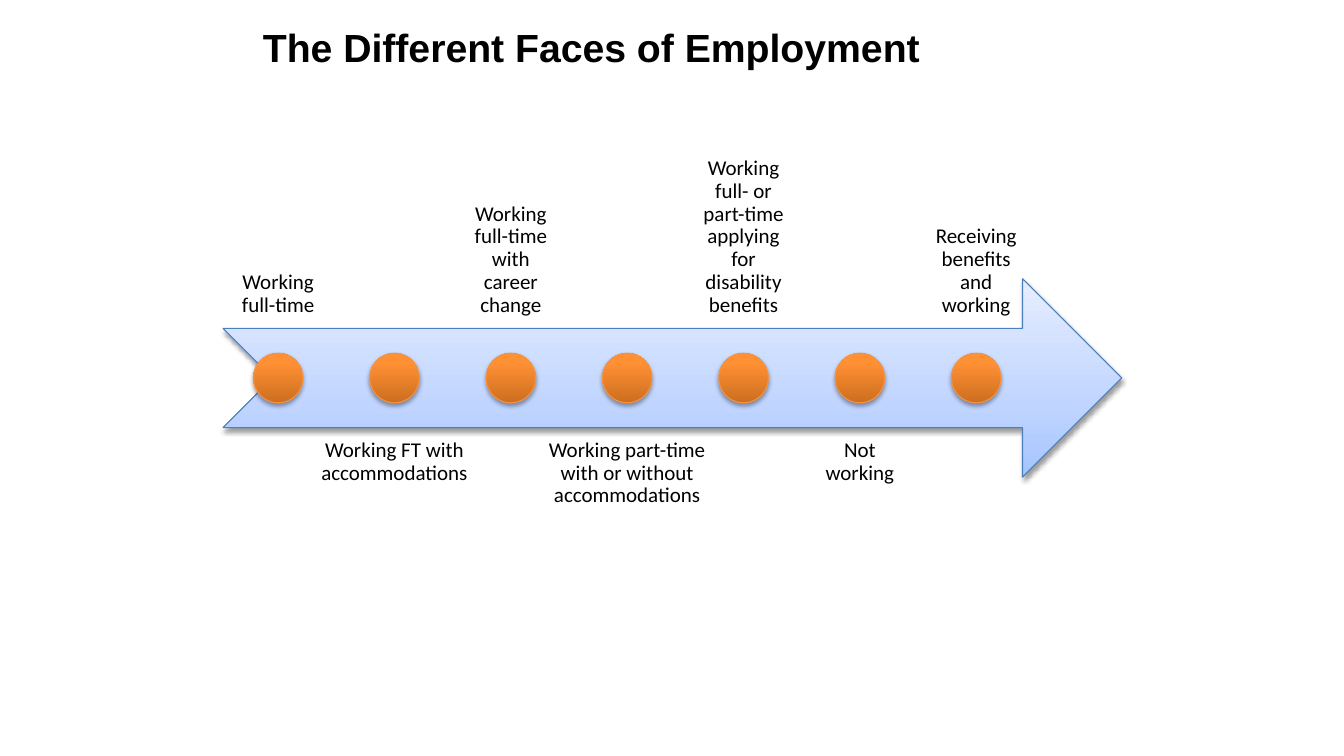
from dataclasses import dataclass

from lxml import etree
from pptx import Presentation
from pptx.dml.color import RGBColor
from pptx.enum.shapes import MSO_SHAPE
from pptx.enum.text import MSO_ANCHOR, MSO_AUTO_SIZE, PP_ALIGN
from pptx.oxml.ns import qn
from pptx.util import Pt

ARROW = MSO_SHAPE.NOTCHED_RIGHT_ARROW
CIRCLE = MSO_SHAPE.OVAL
TOP, BOTTOM = MSO_ANCHOR.TOP, MSO_ANCHOR.BOTTOM
CENTER = PP_ALIGN.CENTER
FIT_SHAPE = MSO_AUTO_SIZE.SHAPE_TO_FIT_TEXT

TITLE = "The Different Faces of Employment"
# (label, label width); labels alternate above and below the arrow
STAGES = [
    ("Working full-time", 79.2),
    ("Working FT with accommodations", 131.8),
    ("Working full-time with career change", 79.2),
    ("Working part-time with or without accommodations", 134.6),
    ("Working full- or part-time applying for disability benefits", 79.2),
    ("Not working", 79.2),
    ("Receiving benefits and working", 79.2),
]


@dataclass(frozen=True)
class Theme:
    title_font: str = "Arial"
    title_size: float = 28
    label_font: str = "Calibri"
    label_size: float = 15
    text: str = "000000"
    shadow: str = "000000"
    arrow_line: str = "4B7EBC"
    arrow_stops: tuple = ((0, "A4C4FF"), (35, "BFD4FF"), (100, "E6EEFF"))
    dot_line: str = "F69240"
    dot_stops: tuple = ((0, "CC6E20"), (80, "FF9034"), (100, "FF9136"))
    line_width: float = 0.75


THEME = Theme()

SLIDE_WIDTH, SLIDE_HEIGHT = 960, 540
TITLE_BOX = (180.7, 13, 599, 41)
ARROW_LEFT, ARROW_TOP = 159.3, 199.1
ARROW_WIDTH, ARROW_HEIGHT = 642, 141.8
DOT_SIZE = 35.4
FIRST_CENTER, STAGE_STEP = 198.7, 83.1
LABEL_HEIGHT = ARROW_HEIGHT
LABEL_INSET = 8.4


def add_color(parent, color):
    return etree.SubElement(parent, qn("a:srgbClr"), val=color)


def add_glossy_shape(slide, kind, box, stops, line_color, shadow_opacity, shadow_distance):
    """Add a preset shape with an upward gradient, thin outline and soft drop shadow."""
    shape = slide.shapes.add_shape(kind, *map(Pt, box))
    shape.fill.gradient()
    shape.fill.gradient_angle = 90
    properties = shape.element.spPr
    stop_list = properties.find(".//" + qn("a:gsLst"))
    for old_stop in list(stop_list):
        stop_list.remove(old_stop)
    for position, color in stops:
        add_color(etree.SubElement(stop_list, qn("a:gs"), pos=str(position * 1000)), color)
    shape.line.color.rgb = RGBColor.from_string(line_color)
    shape.line.width = Pt(THEME.line_width)
    shape.shadow.inherit = False
    shadow = etree.SubElement(
        properties.find(qn("a:effectLst")), qn("a:outerShdw"),
        blurRad=str(Pt(3.1)), dist=str(Pt(shadow_distance)),
        dir="5400000", rotWithShape="0")
    etree.SubElement(add_color(shadow, THEME.shadow), qn("a:alpha"),
                     val=str(shadow_opacity * 1000))


def add_text(slide, text, box, font_name, size):
    """Add a wrapping text box; return its frame and its only paragraph."""
    frame = slide.shapes.add_textbox(*map(Pt, box)).text_frame
    frame.word_wrap = True
    paragraph = frame.paragraphs[0]
    paragraph.text = text
    paragraph.font.name = font_name
    paragraph.font.size = Pt(size)
    paragraph.font.color.rgb = RGBColor.from_string(THEME.text)
    return frame, paragraph


def add_title(slide):
    frame, paragraph = add_text(slide, TITLE, TITLE_BOX, THEME.title_font, THEME.title_size)
    frame.auto_size = FIT_SHAPE
    paragraph.font.bold = True


def add_stage(slide, index, label, width):
    center = FIRST_CENTER + index * STAGE_STEP
    above = index % 2 == 0
    # The arrow shaft fills the middle half of the arrow's height.
    if above:
        top = ARROW_TOP + ARROW_HEIGHT / 4 - LABEL_HEIGHT
    else:
        top = ARROW_TOP + ARROW_HEIGHT * 3 / 4
    frame, paragraph = add_text(
        slide, label, (center - width / 2, top, width, LABEL_HEIGHT),
        THEME.label_font, THEME.label_size)
    frame.margin_left = frame.margin_right = Pt(LABEL_INSET)
    frame.margin_top = frame.margin_bottom = Pt(LABEL_INSET)
    frame.vertical_anchor = BOTTOM if above else TOP
    paragraph.alignment = CENTER
    paragraph.line_spacing = 0.9

    dot_top = ARROW_TOP + (ARROW_HEIGHT - DOT_SIZE) / 2
    add_glossy_shape(slide, CIRCLE, (center - DOT_SIZE / 2, dot_top, DOT_SIZE, DOT_SIZE),
                     THEME.dot_stops, THEME.dot_line, 35, 1.8)


def main():
    presentation = Presentation()
    presentation.slide_width = Pt(SLIDE_WIDTH)
    presentation.slide_height = Pt(SLIDE_HEIGHT)
    slide = presentation.slides.add_slide(presentation.slide_layouts[6])
    add_title(slide)
    add_glossy_shape(slide, ARROW, (ARROW_LEFT, ARROW_TOP, ARROW_WIDTH, ARROW_HEIGHT),
                     THEME.arrow_stops, THEME.arrow_line, 38, 1.6)
    for index, (label, width) in enumerate(STAGES):
        add_stage(slide, index, label, width)
    presentation.save("out.pptx")


if __name__ == "__main__":
    main()
